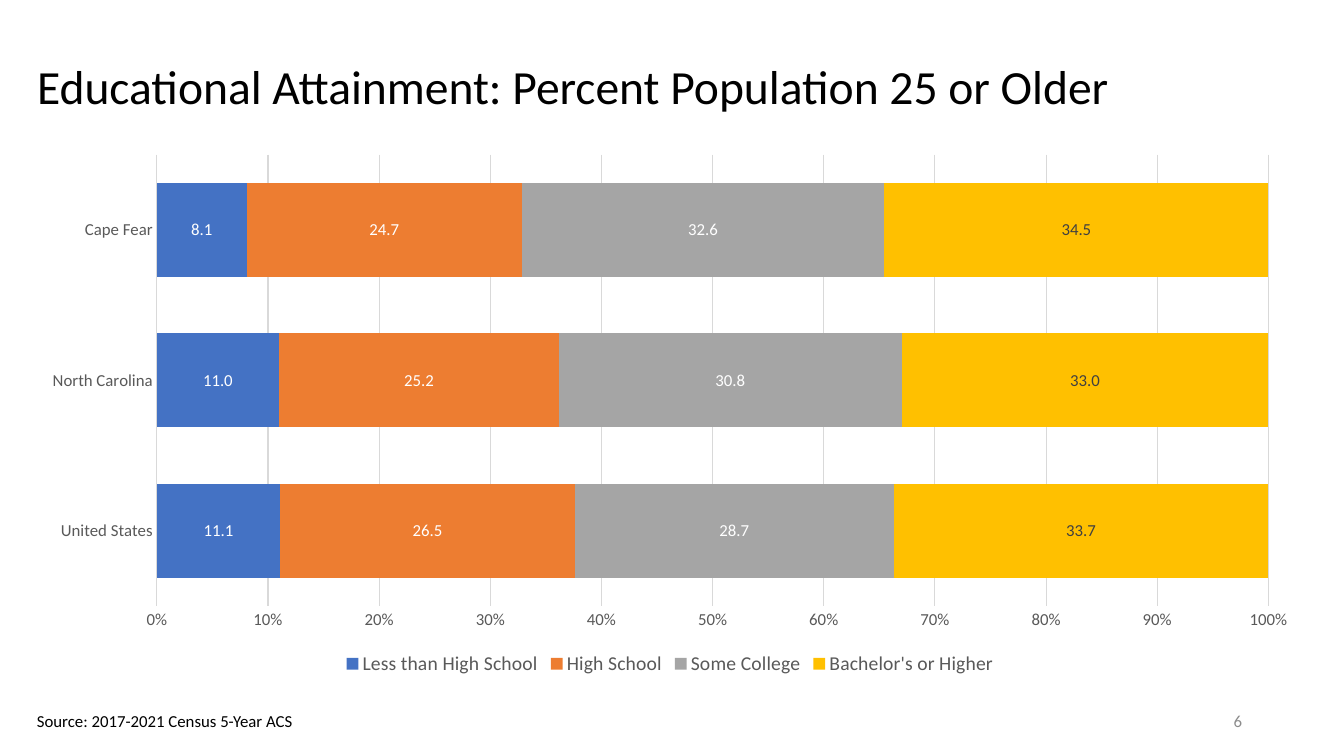
from pptx import Presentation
from pptx.chart.data import CategoryChartData
from pptx.dml.color import RGBColor
from pptx.enum.chart import XL_CHART_TYPE as CT, XL_LABEL_POSITION as LP
from pptx.enum.chart import XL_LEGEND_POSITION as LegendPos, XL_TICK_MARK as Tick
from pptx.enum.text import MSO_ANCHOR as Anchor, PP_ALIGN as Align
from pptx.util import Pt

# Content
TITLE = "Educational Attainment: Percent Population 25 or Older"
SOURCE = "Source: 2017-2021 Census 5-Year ACS"
PAGE = "6"
REGIONS = ["United States", "North Carolina", "Cape Fear"]
LEVELS = [  # name, values, fill, label colour
    ("Less than High School", (11.1, 11.0, 8.1), "blue", "white"),
    ("High School", (26.5, 25.2, 24.7), "orange", "white"),
    ("Some College", (28.7, 30.8, 32.6), "gray", "white"),
    ("Bachelor's or Higher", (33.7, 33.0, 34.5), "gold", "dark"),
]
COLORS = {
    "black": "000000", "white": "FFFFFF", "dark": "404040", "axis": "595959",
    "grid": "D9D9D9", "page": "8C8C8C", "blue": "4472C4", "orange": "ED7D31",
    "gray": "A5A5A5", "gold": "FFC000",
}
FONT = "Calibri"

# Layout in px
PX = 914400 / 100.8
SLIDE_W, SLIDE_H = 1344, 756
LEFT, WIDTH = 27, 1286
TITLE_TOP, TITLE_H = 34, 110
CHART_TOP, CHART_H = TITLE_TOP + TITLE_H, 536


def box(*lengths):
    return [round(n * PX) for n in lengths]


def rgb(name):
    return RGBColor.from_string(COLORS[name])


def set_font(font, size, color):
    font.name, font.size, font.bold = FONT, Pt(size), False
    font.color.rgb = rgb(color)


def write(sp, text, size=12, color="black", align=Align.LEFT,
          anchor=Anchor.TOP, wrap=True, spacing=1.0):
    tf = sp.text_frame
    tf.word_wrap, tf.vertical_anchor = wrap, anchor
    p = tf.paragraphs[0]
    p.alignment, p.line_spacing = align, spacing
    r = p.add_run()
    r.text = text
    set_font(r.font, size, color)


prs = Presentation()
prs.slide_width, prs.slide_height = box(SLIDE_W, SLIDE_H)
s = prs.slides.add_slide(prs.slide_layouts[5])

# Title
title = s.shapes.title
title.left, title.top, title.width, title.height = box(LEFT, TITLE_TOP, WIDTH, TITLE_H)
write(title, TITLE, size=34, anchor=Anchor.MIDDLE, spacing=0.9)

# Chart
data = CategoryChartData(number_format="#,##0.0")
data.categories = REGIONS
for name, values, *_ in LEVELS:
    data.add_series(name, values)
chart = s.shapes.add_chart(
    CT.BAR_STACKED_100, *box(LEFT, CHART_TOP, WIDTH, CHART_H), data).chart
set_font(chart.font, 10, "black")
chart.has_title = False
chart.has_legend = True
chart.legend.position = LegendPos.BOTTOM
chart.legend.include_in_layout = False
set_font(chart.legend.font, 14, "axis")

# Bars and labels
plot = chart.plots[0]
plot.gap_width, plot.overlap, plot.vary_by_categories = 60, 100, False
for series, (_, _, fill, label_color) in zip(plot.series, LEVELS):
    series.format.fill.solid()
    series.format.fill.fore_color.rgb = rgb(fill)
    labels = series.data_labels
    labels.show_value, labels.position = True, LP.CENTER
    labels.number_format, labels.number_format_is_linked = "#,##0.0", False
    set_font(labels.font, 12, label_color)

# Axes
regions, percent = chart.category_axis, chart.value_axis
for axis in (regions, percent):
    axis.major_tick_mark = axis.minor_tick_mark = Tick.NONE
    set_font(axis.tick_labels.font, 12, "axis")
percent.has_major_gridlines = True
for line in (regions.format.line, percent.major_gridlines.format.line):
    line.color.rgb, line.width = rgb("grid"), Pt(0.75)
percent.format.line.fill.background()
percent.minimum_scale, percent.maximum_scale, percent.major_unit = 0, 1, 0.1
percent.tick_labels.number_format = "0%"
percent.tick_labels.number_format_is_linked = False

# Footer
write(s.shapes.add_textbox(*box(950, 701, 302, 40)), PAGE, color="page",
      align=Align.RIGHT, anchor=Anchor.MIDDLE)
write(s.shapes.add_textbox(*box(LEFT, 706, 280, 30)), SOURCE, wrap=False)

prs.save("out.pptx")
